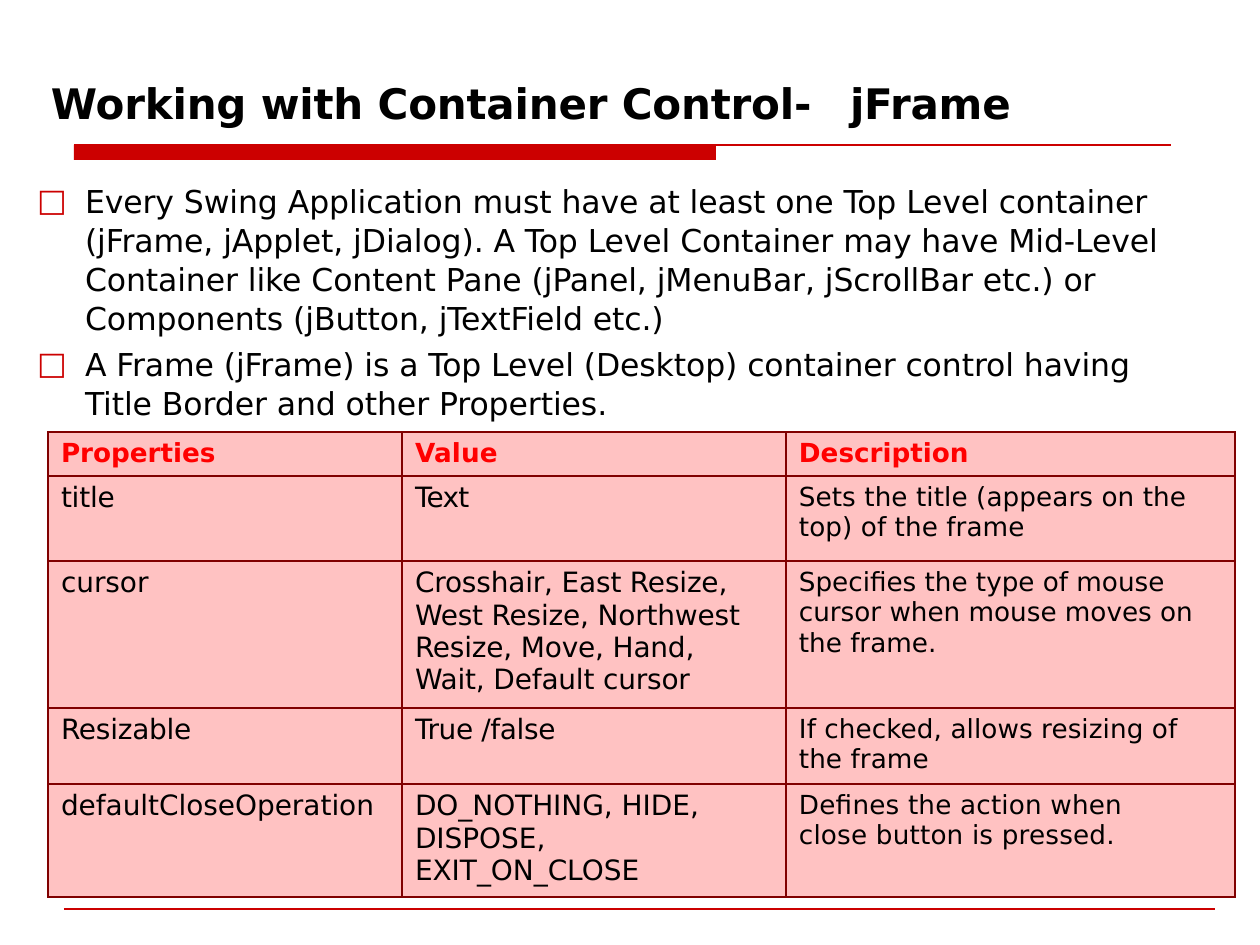
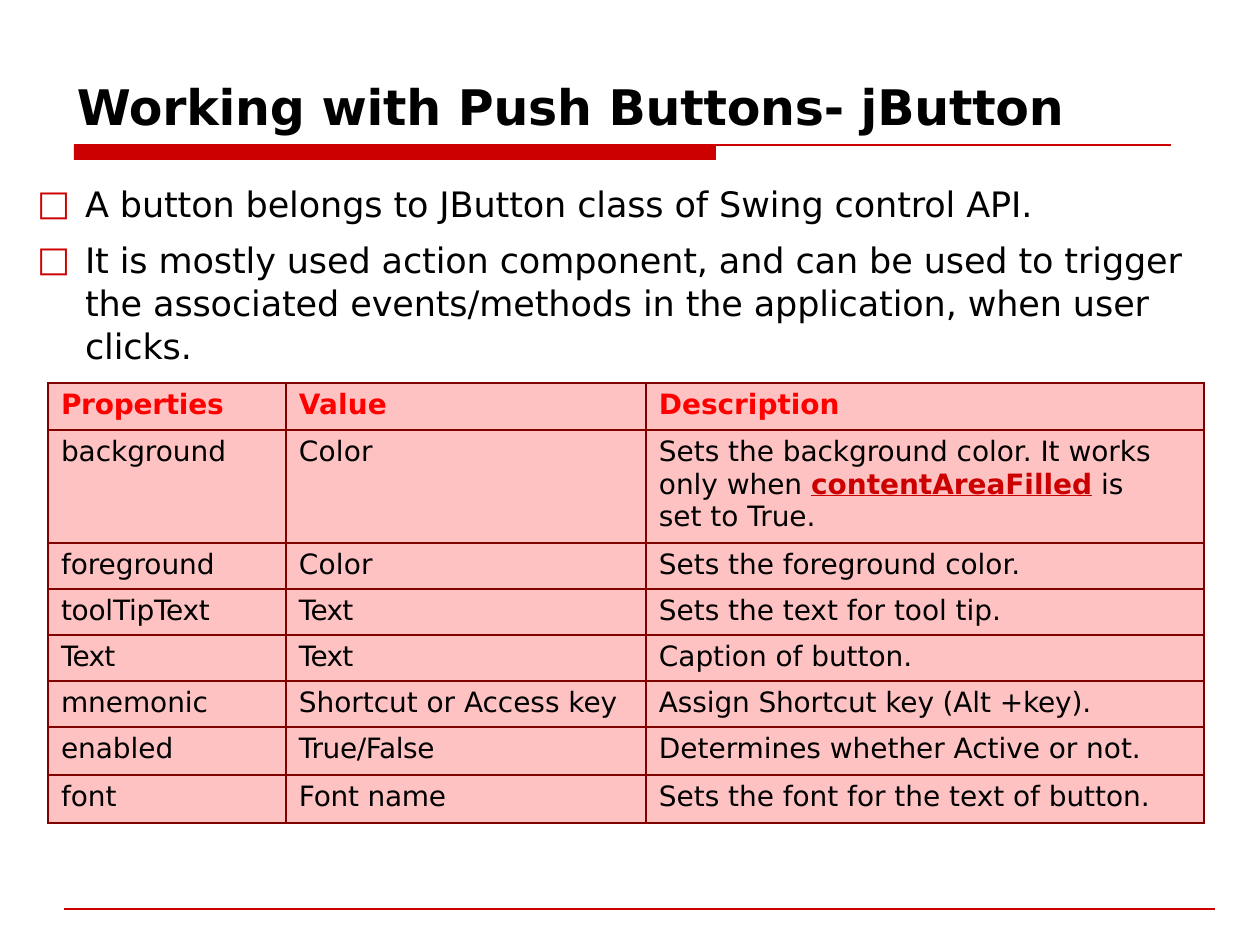
from lxml import etree
from pptx import Presentation
from pptx import util as u
from pptx.dml.color import RGBColor
from pptx.enum import shapes, text
from pptx.oxml import ns

PX = 914400 / 126
FONT = "DejaVu Sans"
COLORS = {
    "ink": "000000",
    "accent": "CC0000",
    "header": "FF0000",
    "cell": "FFC2C2",
    "border": "800000",
}
TABLE_LEFT = 48
CELL_INDENT = 13
CELL_TOP = 6
BODY_INDENT = 49

# A cell is a string or (string, letter spacing); *stars* mark emphasis.
FRAME_ROWS = [
    ["Properties", ("Value", 0.1), "Description"],
    [("title", -0.1), ("Text", -0.4), ("Sets the title (appears on the top) of the frame", 0.05)],
    ["cursor",
     ("Crosshair, East Resize, West Resize, Northwest Resize, Move, Hand, Wait, Default cursor", -0.08),
     "Specifies the type of mouse cursor when mouse moves on the frame."],
    [("Resizable", -0.1), ("True /false", -0.2),
     ("If checked, allows resizing of the frame", 0.05)],
    ["defaultCloseOperation", "DO_NOTHING, HIDE, DISPOSE, EXIT_ON_CLOSE",
     ("Defines the action when close button is pressed.", 0.1)],
]
BUTTON_ROWS = [
    [("Properties", -0.1), ("Value", 0.1), "Description"],
    ["background", ("Color", 0.1),
     "Sets the background color. It works only when *contentAreaFilled* is set to True."],
    ["foreground", ("Color", 0.1), "Sets the foreground color."],
    [("toolTipText", -0.1), ("Text", -0.4), "Sets the text for tool tip."],
    [("Text", -0.4), ("Text", -0.4), "Caption of button."],
    ["mnemonic", "Shortcut or Access key", ("Assign Shortcut key (Alt +key).", -0.05)],
    ["enabled", ("True/False", -0.2), "Determines whether Active or not."],
    ["font", ("Font name", -0.1), "Sets the font for the text of button."],
]


def px(length):
    return u.Emu(round(length * PX))


def color(name):
    return RGBColor.from_string(COLORS[name])


def add_element(parent, tag, **attributes):
    return etree.SubElement(parent, ns.qn(tag), **attributes)


def style_span(span, size, tint="ink", bold=False, spacing=0):
    span.font.name = FONT
    span.font.size = u.Pt(size)
    span.font.bold = bold
    span.font.color.rgb = color(tint)
    if spacing:
        span._r.get_or_add_rPr().set("spc", str(round(spacing * 100)))


def place_text(box, left, top, width, height):
    """Position a placeholder and give it flush, top-anchored text."""
    box.left, box.top, box.width, box.height = map(px, (left, top, width, height))
    frame = box.text_frame
    frame.word_wrap = True
    frame.auto_size = text.MSO_AUTO_SIZE.NONE
    frame.vertical_anchor = text.MSO_ANCHOR.TOP
    frame.margin_left = frame.margin_right = frame.margin_bottom = 0
    frame.margin_top = px(1)
    return frame


def set_title(page, words, place, size, tab=None):
    frame = place_text(page.shapes.title, *place)
    frame.text = words
    para = frame.paragraphs[0]
    para.alignment = text.PP_ALIGN.LEFT
    properties = para._p.get_or_add_pPr()
    properties.set("marL", str(px(1)))
    if tab:
        stops = add_element(properties, "a:tabLst")
        add_element(stops, "a:tab", pos=str(px(tab)), algn="l")
    for span in para.runs:
        style_span(span, size, bold=True, spacing=-0.1)


def set_bullets(page, items, place, size, gap, spacing):
    frame = place_text(page.placeholders[1], *place)
    frame.text = "\n".join(items)
    for number, para in enumerate(frame.paragraphs):
        para.alignment = text.PP_ALIGN.LEFT
        para.line_spacing = 1.03
        para.space_before = u.Pt(gap if number else 0)
        properties = para._p.get_or_add_pPr()
        properties.set("marL", str(px(BODY_INDENT)))
        properties.set("indent", str(-px(BODY_INDENT - 1)))
        tint = add_element(properties, "a:buClr")
        add_element(tint, "a:srgbClr", val=COLORS["accent"])
        add_element(properties, "a:buFont", typeface=FONT)
        add_element(properties, "a:buChar", char="□")
        for span in para.runs:
            style_span(span, size, spacing=spacing)


def add_rule(page, left, right, top):
    rule = page.shapes.add_connector(
        shapes.MSO_CONNECTOR.STRAIGHT, px(left), px(top), px(right), px(top))
    rule.line.color.rgb = color("accent")
    rule.line.width = u.Pt(1)
    add_element(rule._element.spPr, "a:effectLst")


def add_bands(page):
    """Draw the title band, its thin rule and the footer rule."""
    band = page.shapes.add_shape(
        shapes.MSO_SHAPE.RECTANGLE, px(74), px(145), px(642), px(15))
    band.shadow.inherit = False
    band.fill.solid()
    band.fill.fore_color.rgb = color("accent")
    band.line.fill.background()
    add_rule(page, 74, 1171, 145)
    add_rule(page, 64, 1215, 909)


def add_borders(cell):
    properties = cell._tc.get_or_add_tcPr()
    for side in "LRTB":
        edge = add_element(properties, f"a:ln{side}", w=str(u.Pt(1)))
        fill = add_element(edge, "a:solidFill")
        add_element(fill, "a:srgbClr", val=COLORS["border"])


def fill_cell(cell, content, size, header, right_margin):
    words, spacing = (content, 0) if isinstance(content, str) else content
    add_borders(cell)
    cell.fill.solid()
    cell.fill.fore_color.rgb = color("cell")
    cell.margin_left, cell.margin_right = px(CELL_INDENT), px(right_margin)
    cell.margin_top, cell.margin_bottom = px(CELL_TOP), 0
    para = cell.text_frame.paragraphs[0]
    for number, part in enumerate(words.split("*")):
        span = para.add_run()
        span.text = part
        emphasised = number % 2 == 1
        tint = "accent" if emphasised else "header" if header else "ink"
        style_span(span, size, tint, header or emphasised, spacing)
        if emphasised:
            span.font.underline = True


def add_property_table(page, rows, top, widths, heights, sizes, header_size, margins):
    """Sizes and right margins are given per column."""
    frame = page.shapes.add_table(
        len(rows), len(widths), px(TABLE_LEFT), px(top), px(sum(widths)), px(sum(heights)))
    table = frame.table
    table.first_row = table.horz_banding = False
    for column, width in zip(table.columns, widths):
        column.width = px(width)
    for row, height in zip(table.rows, heights):
        row.height = px(height)
    for r, row in enumerate(rows):
        for c, content in enumerate(row):
            size = sizes[c] if r else header_size
            fill_cell(table.cell(r, c), content, size, r == 0, margins[c])


def add_page(deck):
    page = deck.slides.add_slide(deck.slide_layouts[1])
    add_bands(page)
    return page


def main():
    deck = Presentation()
    deck.slide_width, deck.slide_height = px(1260), px(945)

    # jFrame
    page = add_page(deck)
    set_title(page, "Working with Container Control-\tjFrame", (50, 76, 1040, 54), 24, tab=799)
    set_bullets(page, [
        "Every Swing Application must have at least one Top Level container "
        "(jFrame, jApplet, jDialog). A Top Level Container may have Mid-Level "
        "Container like Content Pane (jPanel, jMenuBar, jScrollBar etc.) or "
        "Components (jButton, jTextField etc.)",
        "A Frame (jFrame) is a Top Level (Desktop) container control having "
        "Title Border and other Properties.",
    ], (36, 180, 1158, 238), 18, gap=4.3, spacing=-0.05)
    add_property_table(page, FRAME_ROWS, 432, [354, 384, 449], [44, 85, 147, 76, 113],
                       sizes=[16, 16, 15], header_size=15, margins=[0, 40, 40])

    # jButton
    page = add_page(deck)
    set_title(page, "Working with Push Buttons- jButton", (76, 75, 1040, 63), 28)
    set_bullets(page, [
        "A button belongs to JButton class of Swing control API.",
        "It is mostly used action component, and can be used to trigger "
        "the associated events/methods in the application, when user clicks.",
    ], (36, 180, 1160, 183), 20, gap=7.2, spacing=-0.08)
    add_property_table(page, BUTTON_ROWS, 383, [238, 360, 558],
                       [47, 113] + [46] * 4 + [48] * 2,
                       sizes=[16, 16, 16], header_size=16, margins=[0, 0, 45])

    deck.save("out.pptx")


if __name__ == "__main__":
    main()
